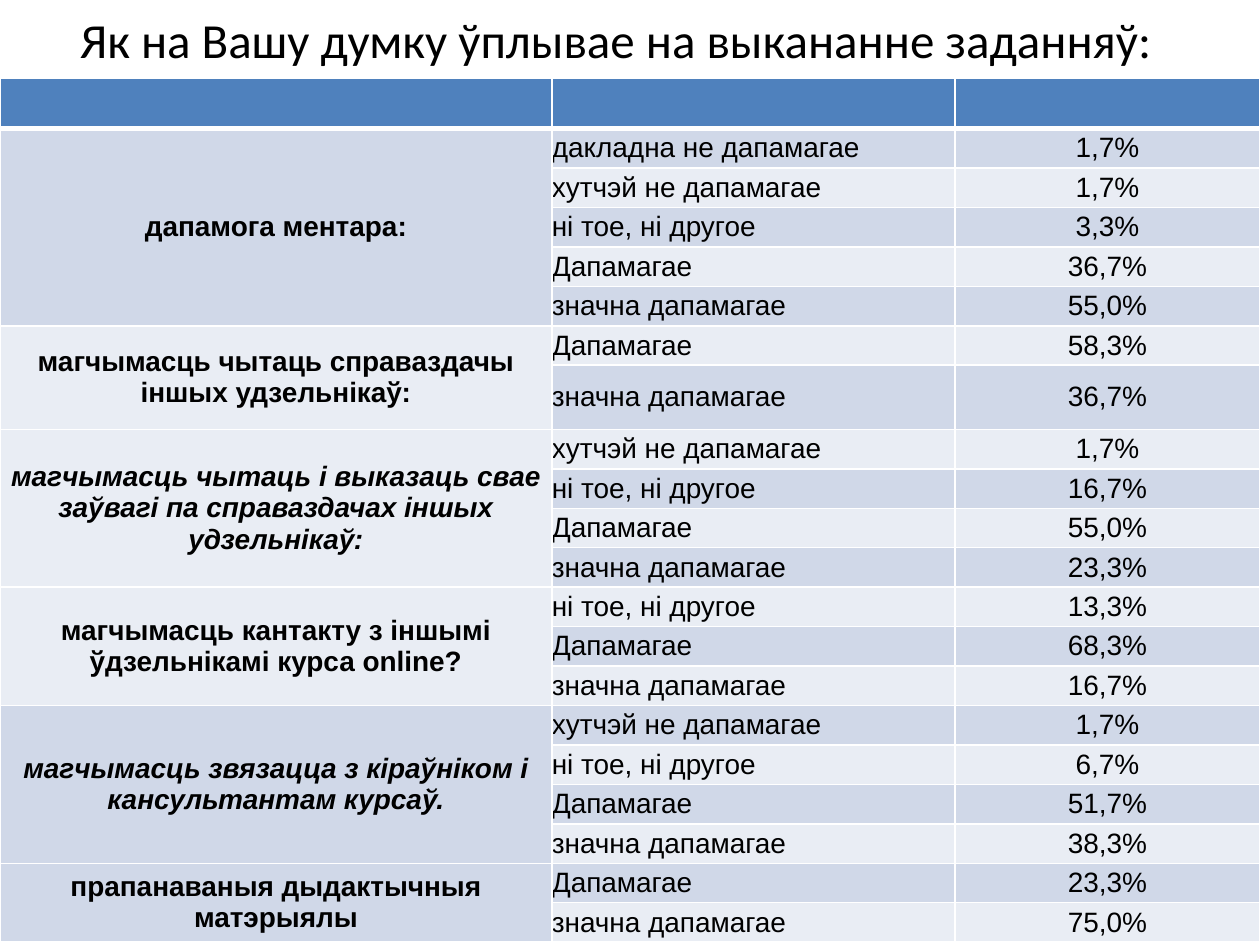
from dataclasses import dataclass
from itertools import product

from lxml.etree import SubElement
from pptx import Presentation
from pptx.dml.color import RGBColor as RGB
from pptx.enum.text import MSO_ANCHOR as Anchor, PP_ALIGN as Align
from pptx.oxml.ns import qn
from pptx.table import Table, _Cell as Cell
from pptx.util import Inches, Pt

HUES = {"text": "000000", "head": "4F81BD", "dark": "D0D8E8",
        "light": "E9EDF4", "line": "FFFFFF"}
WIDTHS = (4.38, 3.2, 2.42)
TOP, TOTAL, HEAD, TALL = 0.62, 6.86, 0.4, 0.51
TALL_ROW = 7
SURE_NOT, NOT, MID, HELP, MUCH = (
    "дакладна не дапамагае", "хутчэй не дапамагае", "ні тое, ні другое",
    "Дапамагае", "значна дапамагае")


@dataclass(frozen=True)
class Group:
    title: str
    rates: dict[str, str]
    slant: bool = False


GROUPS = (
    Group("дапамога ментара:",
          {SURE_NOT: "1,7%", NOT: "1,7%", MID: "3,3%", HELP: "36,7%", MUCH: "55,0%"}),
    Group("магчымасць чытаць справаздачы іншых удзельнікаў:",
          {HELP: "58,3%", MUCH: "36,7%"}),
    Group("магчымасць чытаць і выказаць свае заўвагі па справаздачах іншых удзельнікаў:",
          {NOT: "1,7%", MID: "16,7%", HELP: "55,0%", MUCH: "23,3%"}, True),
    Group("магчымасць кантакту з іншымі ўдзельнікамі курса online?",
          {MID: "13,3%", HELP: "68,3%", MUCH: "16,7%"}),
    Group("магчымасць звязацца з кіраўніком і кансультантам курсаў.",
          {NOT: "1,7%", MID: "6,7%", HELP: "51,7%", MUCH: "38,3%"}, True),
    Group("прапанаваныя дыдактычныя матэрыялы",
          {HELP: "23,3%", MUCH: "75,0%"}),
)


def paint(cell: Cell, hue: str, top: int = 1, base: int = 1) -> None:
    """Fill a cell and rule its four sides."""
    props = cell._tc.get_or_add_tcPr()
    for side, size in zip("LRTB", (1, 1, top, base)):
        line = SubElement(props, qn(f"a:ln{side}"), w=str(Pt(size)))
        fill = SubElement(line, qn("a:solidFill"))
        SubElement(fill, qn("a:srgbClr"), val=HUES["line"])
    cell.fill.solid()
    cell.fill.fore_color.rgb = RGB.from_string(HUES[hue])


def write(cell: Cell, text: str, align: Align = Align.CENTER,
          bold: bool = False, slant: bool = False) -> None:
    """Put styled text in a cell without margins."""
    cell.margin_left = cell.margin_right = cell.margin_top = cell.margin_bottom = 0
    cell.vertical_anchor = Anchor.MIDDLE
    cell.text = text
    para = cell.text_frame.paragraphs[0]
    para.alignment = align
    font = para.font
    font.name, font.size, font.bold, font.italic = "Arial", Pt(16), bold, slant
    font.color.rgb = RGB.from_string(HUES["text"])


def add_title(slide) -> None:
    """Add the heading above the table."""
    box = slide.shapes.add_textbox(0, 0, Inches(9.77), Inches(TOP))
    frame = box.text_frame
    frame.word_wrap = True
    frame.vertical_anchor = Anchor.MIDDLE
    para = frame.paragraphs[0]
    para.text = "Як на Вашу думку ўплывае на выкананне заданняў:"
    para.alignment = Align.CENTER
    para.font.name, para.font.size = "Calibri", Pt(28)
    para.font.color.rgb = RGB.from_string(HUES["text"])


def add_grid(slide) -> Table:
    """Add the painted, empty table."""
    count = 1 + sum(len(group.rates) for group in GROUPS)
    table = slide.shapes.add_table(count, len(WIDTHS), 0, Inches(TOP),
                                   Inches(sum(WIDTHS)), Inches(TOTAL)).table
    for col, width in zip(table.columns, WIDTHS):
        col.width = Inches(width)
    sizes = {0: HEAD, TALL_ROW: TALL}
    step = (TOTAL - HEAD - TALL) / (count - len(sizes))
    for num, row in enumerate(table.rows):
        row.height = Inches(sizes.get(num, step))
    for row, col in product(range(count), range(len(WIDTHS))):
        hue = "head" if row == 0 else "dark" if row % 2 else "light"
        paint(table.cell(row, col), hue, 3 if row == 1 else 1, 1 if row else 3)
    return table


def fill_grid(table: Table) -> None:
    """Write each group of answers and merge its title cells."""
    row = 1
    for group in GROUPS:
        first = table.cell(row, 0)
        first.merge(table.cell(row + len(group.rates) - 1, 0))
        write(first, group.title, bold=True, slant=group.slant)
        for row, (label, rate) in enumerate(group.rates.items(), row):
            write(table.cell(row, 1), label, Align.LEFT)
            write(table.cell(row, 2), rate)
        row += 1


def main() -> None:
    """Build and save the survey slide."""
    deck = Presentation()
    deck.slide_width, deck.slide_height = Inches(10), Inches(7.5)
    slide = deck.slides.add_slide(deck.slide_layouts[6])
    add_title(slide)
    fill_grid(add_grid(slide))
    deck.save("out.pptx")


if __name__ == "__main__":
    main()
